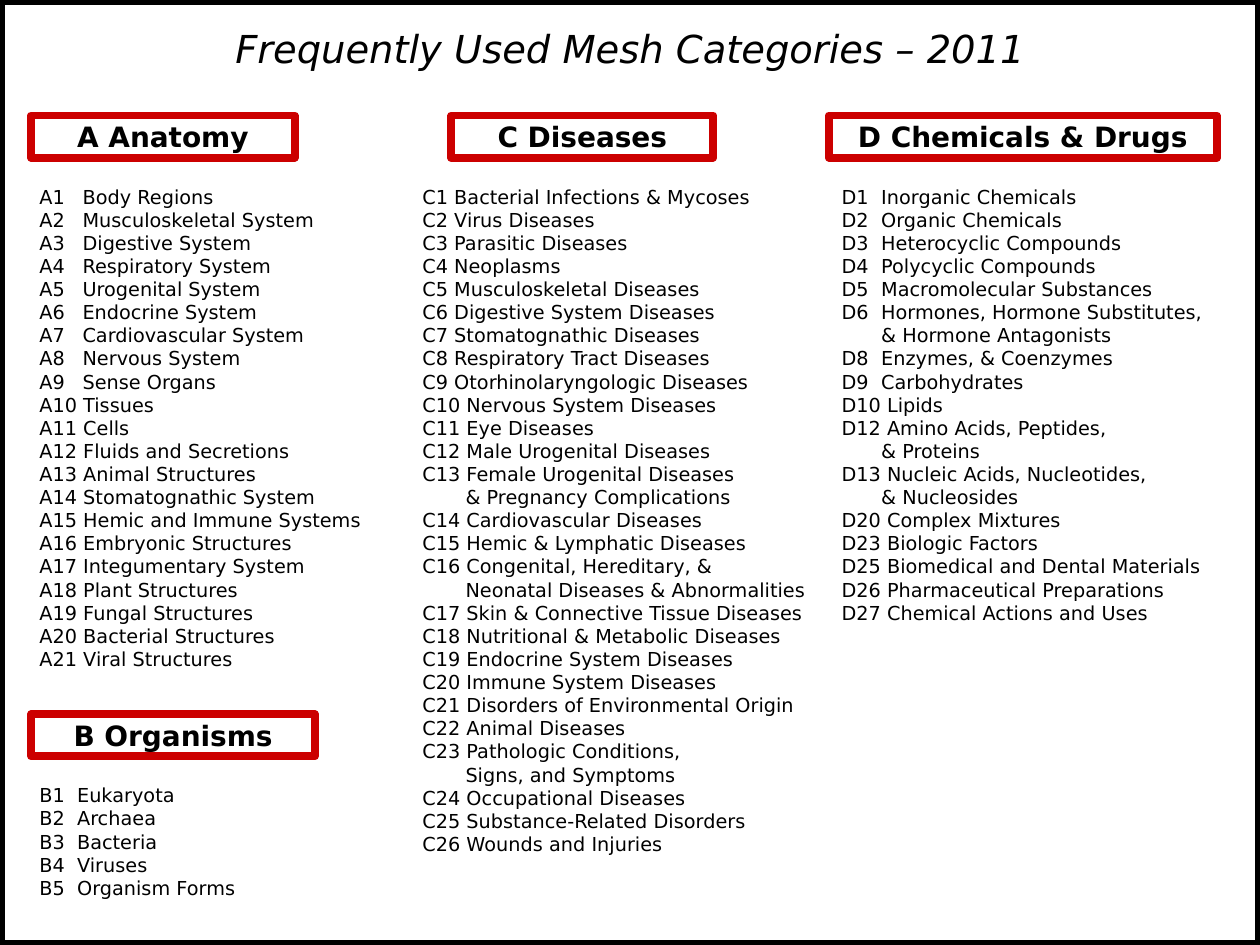
from pptx import Presentation
from pptx.dml.color import RGBColor
from pptx.enum.shapes import MSO_SHAPE as Shape
from pptx.enum.text import MSO_ANCHOR as Anchor, MSO_AUTO_SIZE as AutoSize, PP_ALIGN as Align
from pptx.oxml.ns import qn
from pptx.util import Cm, Pt

TITLE = "Frequently Used Mesh Categories – 2011"
FONT, BLACK, WHITE, RED = "DejaVu Sans", "000000", "FFFFFF", "CC0000"
HEAD_HEIGHT, LIST_GAP = 0.85, 1.27

CATEGORIES = [
    {"letter": "A", "name": "Anatomy", "head": (0.63, 2.33, 5.31), "list": (0.54, 7.32, 10.19),
     "hang": 0.87, "aligned": True, "terms": [
         "A1 Body Regions", "A2 Musculoskeletal System", "A3 Digestive System",
         "A4 Respiratory System", "A5 Urogenital System", "A6 Endocrine System",
         "A7 Cardiovascular System", "A8 Nervous System", "A9 Sense Organs", "A10 Tissues",
         "A11 Cells", "A12 Fluids and Secretions", "A13 Animal Structures",
         "A14 Stomatognathic System", "A15 Hemic and Immune Systems",
         "A16 Embryonic Structures", "A17 Integumentary System", "A18 Plant Structures",
         "A19 Fungal Structures", "A20 Bacterial Structures", "A21 Viral Structures"]},
    {"letter": "B", "name": "Organisms", "head": (0.63, 14.4, 5.72), "list": (0.54, 5.36, 2.64),
     "hang": 0.76, "aligned": True, "terms": [
         "B1 Eukaryota", "B2 Archaea", "B3 Bacteria", "B4 Viruses", "B5 Organism Forms"]},
    {"letter": "C", "name": "Diseases", "head": (9.1, 2.33, 5.28), "list": (8.26, 8.46, 13.89),
     "hang": 0.87, "aligned": False, "terms": [
         "C1 Bacterial Infections & Mycoses", "C2 Virus Diseases", "C3 Parasitic Diseases",
         "C4 Neoplasms", "C5 Musculoskeletal Diseases", "C6 Digestive System Diseases",
         "C7 Stomatognathic Diseases", "C8 Respiratory Tract Diseases",
         "C9 Otorhinolaryngologic Diseases", "C10 Nervous System Diseases",
         "C11 Eye Diseases", "C12 Male Urogenital Diseases",
         "C13 Female Urogenital Diseases\v& Pregnancy Complications",
         "C14 Cardiovascular Diseases", "C15 Hemic & Lymphatic Diseases",
         "C16 Congenital, Hereditary, &\vNeonatal Diseases & Abnormalities",
         "C17 Skin & Connective Tissue Diseases", "C18 Nutritional & Metabolic Diseases",
         "C19 Endocrine System Diseases", "C20 Immune System Diseases",
         "C21 Disorders of Environmental Origin", "C22 Animal Diseases",
         "C23 Pathologic Conditions,\vSigns, and Symptoms", "C24 Occupational Diseases",
         "C25 Substance-Related Disorders", "C26 Wounds and Injuries"]},
    {"letter": "D", "name": "Chemicals & Drugs", "head": (16.71, 2.33, 7.82),
     "list": (16.71, 8.05, 9.19), "hang": 0.8, "aligned": True, "terms": [
         "D1 Inorganic Chemicals", "D2 Organic Chemicals", "D3 Heterocyclic Compounds",
         "D4 Polycyclic Compounds", "D5 Macromolecular Substances",
         "D6 Hormones, Hormone Substitutes,\v& Hormone Antagonists",
         "D8 Enzymes, & Coenzymes", "D9 Carbohydrates", "D10 Lipids",
         "D12 Amino Acids, Peptides,\v& Proteins",
         "D13 Nucleic Acids, Nucleotides,\v& Nucleosides", "D20 Complex Mixtures",
         "D23 Biologic Factors", "D25 Biomedical and Dental Materials",
         "D26 Pharmaceutical Preparations", "D27 Chemical Actions and Uses"]},
]


def color(hex_code):
    return RGBColor.from_string(hex_code)


def place(shape, left, top, width, height):
    shape.left, shape.top, shape.width, shape.height = map(Cm, (left, top, width, height))


def write(paragraph, text, size, align=Align.LEFT, bold=False, italic=False):
    paragraph.text, paragraph.alignment = text, align
    paragraph.space_before = Pt(0)
    font = paragraph.font
    font.name, font.size, font.bold, font.italic = FONT, Pt(size), bold, italic
    font.color.rgb = color(BLACK)


def set_frame(frame, anchor, wrap):
    frame.auto_size, frame.vertical_anchor, frame.word_wrap = AutoSize.NONE, anchor, wrap


def add_box(slide, bounds, line, weight):
    box = slide.shapes.add_shape(Shape.RECTANGLE, *map(Cm, bounds))
    box.shadow.inherit = False
    box.fill.background()
    box.line.color.rgb, box.line.width = color(line), Pt(weight)
    return box


def add_heading(slide, category):
    head = add_box(slide, (*category["head"], HEAD_HEIGHT), RED, 4.5)
    head.fill.solid()
    head.fill.fore_color.rgb = color(WHITE)
    set_frame(head.text_frame, Anchor.MIDDLE, False)
    heading = f"{category['letter']} {category['name']}"
    write(head.text_frame.paragraphs[0], heading, 16, Align.CENTER, bold=True)


def fill_list(body, category):
    left, width, height = category["list"]
    place(body, left, category["head"][1] + LIST_GAP, width, height)
    frame = body.text_frame
    set_frame(frame, Anchor.TOP, True)
    for number, term in enumerate(category["terms"]):
        paragraph = frame.add_paragraph() if number else frame.paragraphs[0]
        code, label = term.split(" ", 1)
        gap = "\t" if category["aligned"] and len(code) == 2 else " "
        write(paragraph, code + gap + label, 11)
        properties = paragraph._p.get_or_add_pPr()
        properties.set("marL", str(Cm(category["hang"])))
        properties.set("indent", str(-Cm(category["hang"])))
        properties.insert_element_before(
            properties.makeelement(qn("a:buNone"), {}), "a:tabLst", "a:defRPr", "a:extLst")


def main():
    """Build the slide of MeSH categories."""
    deck = Presentation()
    deck.slide_width, deck.slide_height = Cm(25.4), Cm(19.05)
    slide = deck.slides.add_slide(deck.slide_layouts.get_by_name("Comparison"))
    title, *bodies = [slide.placeholders[index] for index in range(5)]

    add_box(slide, (0, 0, 25.4, 19.05), BLACK, 6)
    place(title, 4.45, 0.43, 16.5, 1.07)
    set_frame(title.text_frame, Anchor.MIDDLE, False)
    write(title.text_frame.paragraphs[0], TITLE, 22, Align.CENTER, italic=True)
    for body, category in zip(bodies, CATEGORIES):
        add_heading(slide, category)
        fill_list(body, category)
    deck.save("out.pptx")


if __name__ == "__main__":
    main()
